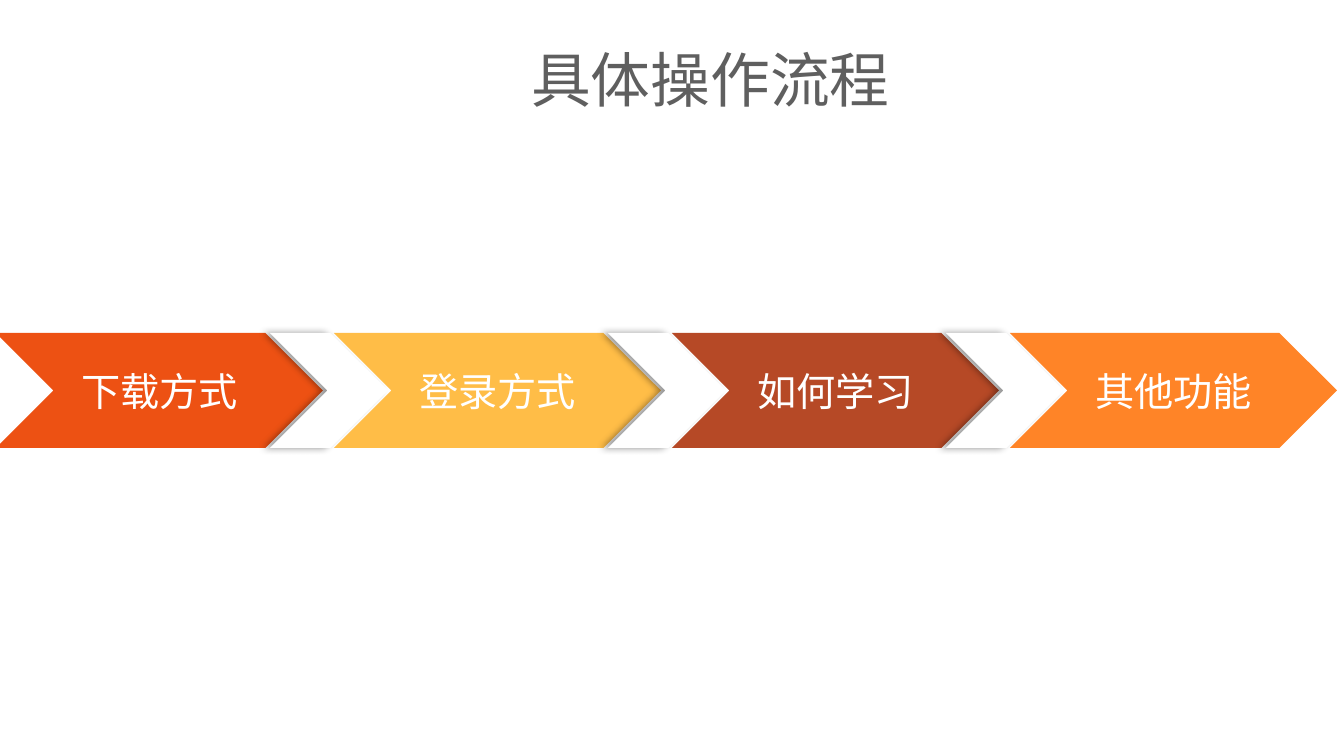
from lxml.etree import SubElement
from pptx import Presentation
from pptx.dml.color import RGBColor
from pptx.enum.shapes import MSO_SHAPE
from pptx.enum.text import MSO_ANCHOR, MSO_AUTO_SIZE, PP_ALIGN
from pptx.oxml.ns import qn
from pptx.util import Emu, Pt

WHITE = RGBColor(0xFF, 0xFF, 0xFF)
GRAY = RGBColor(0x5F, 0x5F, 0x5F)
RED = RGBColor(0xED, 0x51, 0x13)
YELLOW = RGBColor(0xFF, 0xBD, 0x47)
BROWN = RGBColor(0xB6, 0x49, 0x26)
ORANGE = RGBColor(0xFF, 0x84, 0x27)

STEPS = [("下载方式", RED), ("登录方式", YELLOW), ("如何学习", BROWN), ("其他功能", ORANGE)]
LEFT, TOP, HEIGHT, PITCH = -4, 333, 115, 338
STEP_WIDTH, GAP_WIDTH, GAP_OFFSET = 327, 118, 274


def px(n):
    return Emu(round(n * 914400 / 134.4))


class Deck:
    font = "Arial"

    def __init__(self, width, height):
        self.prs = Presentation()
        self.prs.slide_width, self.prs.slide_height = px(width), px(height)
        self.s = self.prs.slides.add_slide(self.prs.slide_layouts[5])

    def set_text(self, tf, text, size, color, align):
        tf.text = text
        tf.word_wrap = True
        tf.vertical_anchor = MSO_ANCHOR.MIDDLE
        p = tf.paragraphs[0]
        p.alignment = align
        p.font.name, p.font.size, p.font.bold = self.font, Pt(size), False
        p.font.color.rgb = color
        return p

    def title(self, text, x, y, w, h, indent):
        sp = self.s.shapes.title
        sp.left, sp.top, sp.width, sp.height = px(x), px(y), px(w), px(h)
        tf = sp.text_frame
        tf.auto_size = MSO_AUTO_SIZE.NONE
        tf.margin_left = tf.margin_right = px(9)
        tf.margin_top = tf.margin_bottom = px(5)
        p = self.set_text(tf, text, 32, GRAY, PP_ALIGN.LEFT)
        p.line_spacing = 0.9
        p._p.get_or_add_pPr().set("marL", str(px(indent)))

    def chevron(self, x, w, color):
        sp = self.s.shapes.add_shape(MSO_SHAPE.CHEVRON, px(x), px(TOP), px(w), px(HEIGHT))
        sp.shadow.inherit = False
        sp.fill.solid()
        sp.fill.fore_color.rgb = color
        sp.line.fill.background()
        return sp

    def step(self, text, x, color):
        tf = self.chevron(x, STEP_WIDTH, color).text_frame
        tf.margin_left = tf.margin_right = tf.margin_top = tf.margin_bottom = 0
        self.set_text(tf, text, 21, WHITE, PP_ALIGN.CENTER)

    def gap(self, x):
        sp = self.chevron(x, GAP_WIDTH, WHITE)
        effects = sp._element.spPr.find(qn("a:effectLst"))
        shadow = SubElement(effects, qn("a:outerShdw"), blurRad=str(Pt(4)), dist=str(Pt(3)),
                            dir="10800000", algn="r", rotWithShape="0")
        black = SubElement(shadow, qn("a:srgbClr"), val="000000")
        SubElement(black, qn("a:alpha"), val="40000")


def main():
    deck = Deck(1344, 756)
    deck.title("具体操作流程", 93, 40, 1158, 86, 429)
    for i, (text, color) in enumerate(STEPS):
        x = LEFT + i * PITCH
        deck.step(text, x, color)
        if i < len(STEPS) - 1:
            deck.gap(x + GAP_OFFSET)
    deck.prs.save("out.pptx")


if __name__ == "__main__":
    main()
